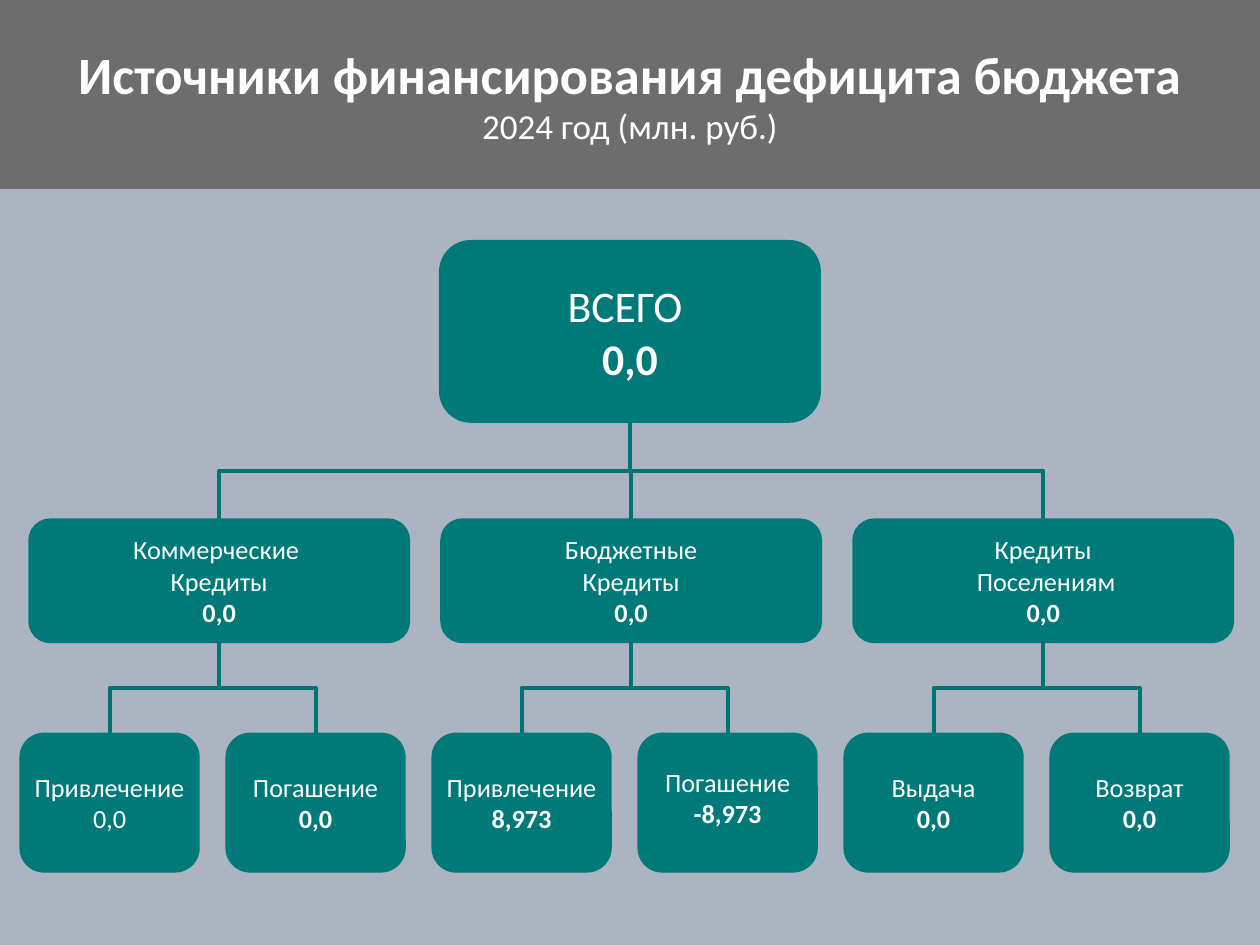
from lxml.etree import SubElement
from pptx import Presentation
from pptx.dml.color import RGBColor
from pptx.enum.shapes import MSO_CONNECTOR, MSO_SHAPE
from pptx.enum.text import MSO_ANCHOR, MSO_AUTO_SIZE, PP_ALIGN
from pptx.oxml.ns import qn
from pptx.util import Inches, Pt

BACKGROUND = RGBColor(0xAC, 0xB3, 0xC1)
HEADER = RGBColor(0x6D, 0x6D, 0x6D)
BOX = RGBColor(0x00, 0x79, 0x79)
CONNECTOR = RGBColor(0x00, 0x73, 0x73)
WHITE = RGBColor(0xFF, 0xFF, 0xFF)
FONT = "Calibri"
LINE_WIDTH = Pt(2.25)

# Grid in inches: left of first column, column step, top, width, height
ROOT_ROW = (3.5, 0, 1.92, 3, 1.42)
BRANCH_ROW = (0.24, 3.27, 4.13, 3, 0.96)
LEAF_ROW = (0.17, 1.635, 5.83, 1.4, 1.08)

# A line of text is (wording, bold)
ROOT = [("ВСЕГО ", False), ("0,0", True)]
BRANCHES = [
    ([("Коммерческие ", False), ("Кредиты", False), ("0,0", True)],
     [[("Привлечение", False), ("0,0", False)],
      [("Погашение", False), ("0,0", True)]]),
    ([("Бюджетные", False), ("Кредиты", False), ("0,0", True)],
     [[("Привлечение", False), ("8,973", True)],
      [("Погашение", False), ("-8,973", True)]]),
    ([("Кредиты", False), (" Поселениям", False), ("0,0", True)],
     [[("Выдача", False), ("0,0", True)],
      [("Возврат", False), ("0,0", True)]]),
]


def write_lines(text_frame, lines):
    """Write one centred paragraph for each (wording, bold, size)."""
    text_frame.vertical_anchor = MSO_ANCHOR.MIDDLE
    for index, (wording, bold, size) in enumerate(lines):
        paragraph = text_frame.add_paragraph() if index else text_frame.paragraphs[0]
        paragraph.alignment = PP_ALIGN.CENTER
        run = paragraph.add_run()
        run.text = wording
        run.font.name = FONT
        run.font.size = Pt(size)
        run.font.bold = bold
        run.font.color.rgb = WHITE


def add_header(presentation, slide):
    title = slide.shapes.title
    title.left = title.top = 0
    title.width = presentation.slide_width
    title.height = int(presentation.slide_height * 0.2)
    title.fill.solid()
    title.fill.fore_color.rgb = HEADER
    title.text_frame.auto_size = MSO_AUTO_SIZE.NONE
    write_lines(title.text_frame, [
        ("Источники финансирования дефицита бюджета", True, 30),
        ("2024 год (млн. руб.)", False, 20),
    ])


def add_box(slide, row, column, lines, size=15):
    left, step, top, width, height = row
    box = slide.shapes.add_shape(
        MSO_SHAPE.ROUNDED_RECTANGLE, Inches(left + step * column),
        Inches(top), Inches(width), Inches(height))
    box.shadow.inherit = False
    box.fill.solid()
    box.fill.fore_color.rgb = BOX
    box.line.color.rgb = BOX
    box.line.width = LINE_WIDTH
    frame = box.text_frame
    frame.word_wrap = False
    frame.margin_left = frame.margin_right = frame.margin_top = frame.margin_bottom = 0
    write_lines(frame, [(wording, bold, size) for wording, bold in lines])
    return box


def connect(slide, parent, child):
    """Draw an elbow that leaves the parent downwards and enters the child from above."""
    start_x, start_y = parent.left + parent.width // 2, parent.top + parent.height
    end_x, end_y = child.left + child.width // 2, child.top
    length, spread = end_y - start_y, abs(end_x - start_x)
    left = (start_x + end_x - length) // 2
    top = (start_y + end_y - spread) // 2
    connector = slide.shapes.add_connector(
        MSO_CONNECTOR.ELBOW, left, top, left + length, top + spread)
    connector.line.color.rgb = CONNECTOR
    connector.line.width = LINE_WIDTH
    properties = connector._element.spPr
    SubElement(properties, qn("a:effectLst"))
    # The preset runs sideways, so it is turned to run down the tree
    transform = properties.find(qn("a:xfrm"))
    if end_x < start_x:
        transform.set("rot", str(90 * 60000))
    else:
        transform.set("rot", str(270 * 60000))
        transform.set("flipH", "1")


def add_tree(slide):
    root = add_box(slide, ROOT_ROW, 0, ROOT, 25)
    for column, (lines, leaves) in enumerate(BRANCHES):
        branch = add_box(slide, BRANCH_ROW, column, lines)
        connect(slide, root, branch)
        for offset, leaf_lines in enumerate(leaves):
            leaf = add_box(slide, LEAF_ROW, 2 * column + offset, leaf_lines)
            if leaf_lines[-1][0].startswith("-"):
                leaf.text_frame.margin_bottom = Inches(0.08)
            connect(slide, branch, leaf)


def main():
    presentation = Presentation()
    presentation.slide_width = Inches(10)
    presentation.slide_height = Inches(7.5)
    slide = presentation.slides.add_slide(presentation.slide_layouts[5])
    slide.background.fill.solid()
    slide.background.fill.fore_color.rgb = BACKGROUND
    add_header(presentation, slide)
    add_tree(slide)
    presentation.save("out.pptx")


if __name__ == "__main__":
    main()
